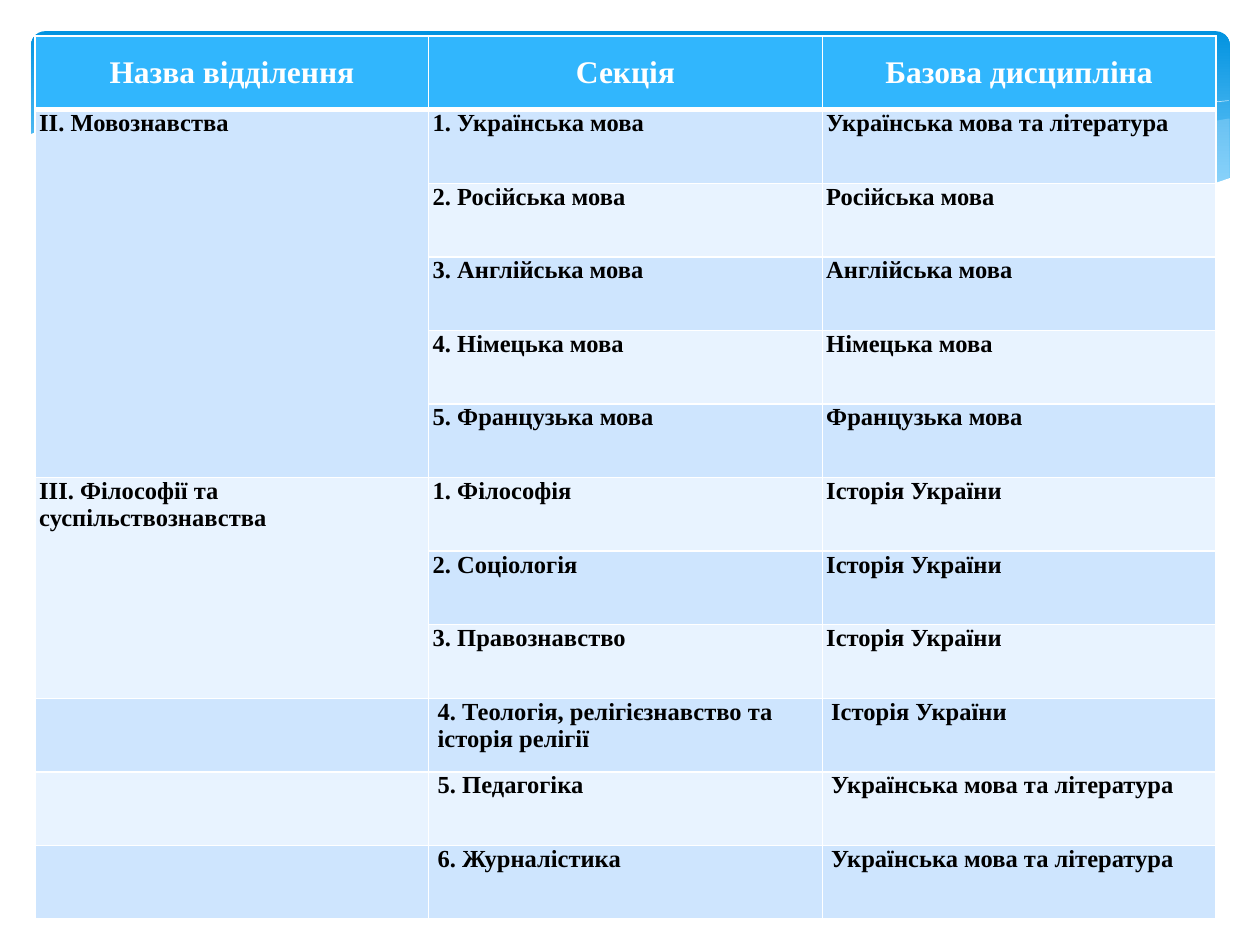
from lxml import etree
from pptx import Presentation
from pptx.dml.color import RGBColor
from pptx.enum.shapes import MSO_SHAPE
from pptx.enum.text import MSO_ANCHOR, PP_ALIGN
from pptx.oxml.ns import qn
from pptx.util import Cm, Pt

COLORS = {
    "white": "FFFFFF", "black": "000000", "header": "31B6FD",
    "band": "CEE5FE", "pale": "E8F3FF",
    "sky_top": "0293E0", "sky_bottom": "83D3FE", "wave": "C6E7FC",
}
FONT = "Times New Roman"
HEADERS = ["Назва відділення", "Секція", "Базова дисципліна"]
UKR, HIST = "Українська мова та література", "Історія України"
GROUPS = [
    ("ІІ. Мовознавства", [
        ("1. Українська мова", UKR),
        ("2. Російська мова", "Російська мова"),
        ("3. Англійська мова", "Англійська мова"),
        ("4. Німецька мова", "Німецька мова"),
        ("5. Французька мова", "Французька мова"),
    ]),
    ("ІІІ. Філософії та\nсуспільствознавства", [
        ("1. Філософія", HIST),
        ("2. Соціологія", HIST),
        ("3. Правознавство", HIST),
    ]),
    ("", [("4. Теологія, релігієзнавство та історія релігії", HIST)]),
    ("", [("5. Педагогіка", UKR)]),
    ("", [("6. Журналістика", UKR)]),
]

RIGHT_WAVE = [
    (2477, 239), (2375, 257), (2263, 279), (2113, 318), (1913, 363), (1679, 406),
    (1826, 424), (1984, 437), (2121, 437), (2238, 424), (2375, 396), (2479, 358),
    (2479, 239)]
MIDDLE_WAVE = [
    (2268, 424), (2126, 404), (1882, 361), (1598, 295), (1445, 259), (1306, 234),
    (1123, 211), (965, 203), (833, 206), (726, 218), (919, 246), (1140, 295),
    (1346, 343), (1570, 389), (1765, 419), (1933, 434), (2078, 439), (2177, 434)]
FALLING_LINE = [
    (785, 229), (874, 213), (1019, 208), (1191, 211), (1412, 231), (1615, 262),
    (1847, 305), (2111, 368), (2304, 422)]
RISING_LINE = [
    (1557, 384), (1707, 343), (1900, 297), (2123, 251), (2273, 224), (2383, 211),
    (2477, 203)]
WHITE_WAVE = [
    (2482, 358), (2362, 399), (2253, 422), (2090, 434), (1933, 432), (1748, 411),
    (1532, 378), (1344, 338), (1135, 290), (927, 244), (742, 216), (584, 201),
    (450, 198), (302, 208), (193, 226), (117, 249), (58, 272), (58, 569), (2482, 569)]
CURVES = [
    (RIGHT_WAVE, "wave", 29), (MIDDLE_WAVE, "wave", 40),
    (FALLING_LINE, None, 100), (RISING_LINE, None, 100),
    (WHITE_WAVE, "white", 100),
]


def rgb(name):
    return RGBColor.from_string(COLORS[name])


def add_curve(s, points, color, opacity):
    builder = s.shapes.build_freeform(*points[0], scale=Cm(0.01))
    builder.add_line_segments(points[1:], close=color is not None)
    sp = builder.convert_to_shape()
    sp.shadow.inherit = False
    if color is None:
        sp.fill.background()
        sp.line.color.rgb = rgb("white")
        sp.line.width = Pt(0.25)
        return
    sp.line.fill.background()
    sp.fill.solid()
    sp.fill.fore_color.rgb = rgb(color)
    if opacity < 100:
        clr = sp._element.spPr.find(".//" + qn("a:srgbClr"))
        etree.SubElement(clr, qn("a:alpha"), val=str(opacity * 1000))


def add_border(cell, side, width):
    tcPr = cell._tc.get_or_add_tcPr()
    ln = etree.SubElement(tcPr, qn("a:ln" + side), w=str(Pt(width)))
    fill = etree.SubElement(ln, qn("a:solidFill"))
    etree.SubElement(fill, qn("a:srgbClr"), val=COLORS["white"])


def format_cell(cell, row, text, inset):
    for side in "LRTB":
        thick = (row, side) in ((0, "B"), (1, "T"))
        add_border(cell, side, 3 if thick else 1)
    cell.fill.solid()
    cell.fill.fore_color.rgb = rgb("header" if row == 0 else "band" if row % 2 else "pale")
    cell.margin_left = cell.margin_right = Cm(inset)
    cell.margin_top = cell.margin_bottom = 0
    cell.vertical_anchor = MSO_ANCHOR.TOP if row else MSO_ANCHOR.MIDDLE
    cell.text_frame.text = text
    for p in cell.text_frame.paragraphs:
        p.alignment = PP_ALIGN.LEFT if row else PP_ALIGN.CENTER
        for r in p.runs:
            r.font.name = FONT
            r.font.size = Pt(14 if row else 18)
            r.font.bold = True
            r.font.color.rgb = rgb("black" if row else "white")


def add_background(s):
    sp = s.shapes.add_shape(MSO_SHAPE.ROUNDED_RECTANGLE, Cm(0.63), Cm(0.63), Cm(24.16), Cm(3.97))
    sp.adjustments[0] = 0.07
    sp.shadow.inherit = False
    sp.line.fill.background()
    sp.fill.gradient()
    sp.fill.gradient_angle = 270
    for stop, name, position in zip(sp.fill.gradient_stops, ("sky_top", "sky_bottom"), (0, 0.9)):
        stop.color.rgb = rgb(name)
        stop.position = position
    for curve in CURVES:
        add_curve(s, *curve)


def add_sections(s):
    count = 1 + sum(len(sections) for _, sections in GROUPS)
    table = s.shapes.add_table(
        count, len(HEADERS), Cm(0.71), Cm(0.73), Cm(23.8), Cm(17.8)).table
    for line in table.rows:
        line.height = Cm(17.8 / count)
    rows = [HEADERS]
    for name, sections in GROUPS:
        first = len(rows)
        for i, section in enumerate(sections):
            rows.append(["" if i else name, *section])
        if len(sections) > 1:
            table.cell(first, 0).merge(table.cell(len(rows) - 1, 0))
    for i, row in enumerate(rows):
        for j, text in enumerate(row):
            format_cell(table.cell(i, j), i, text, 0.08 if i < 9 else 0.18)


def main():
    prs = Presentation()
    prs.slide_width, prs.slide_height = Cm(25.4), Cm(19.05)
    s = prs.slides.add_slide(prs.slide_layouts[6])
    add_background(s)
    add_sections(s)
    prs.save("out.pptx")


if __name__ == "__main__":
    main()
